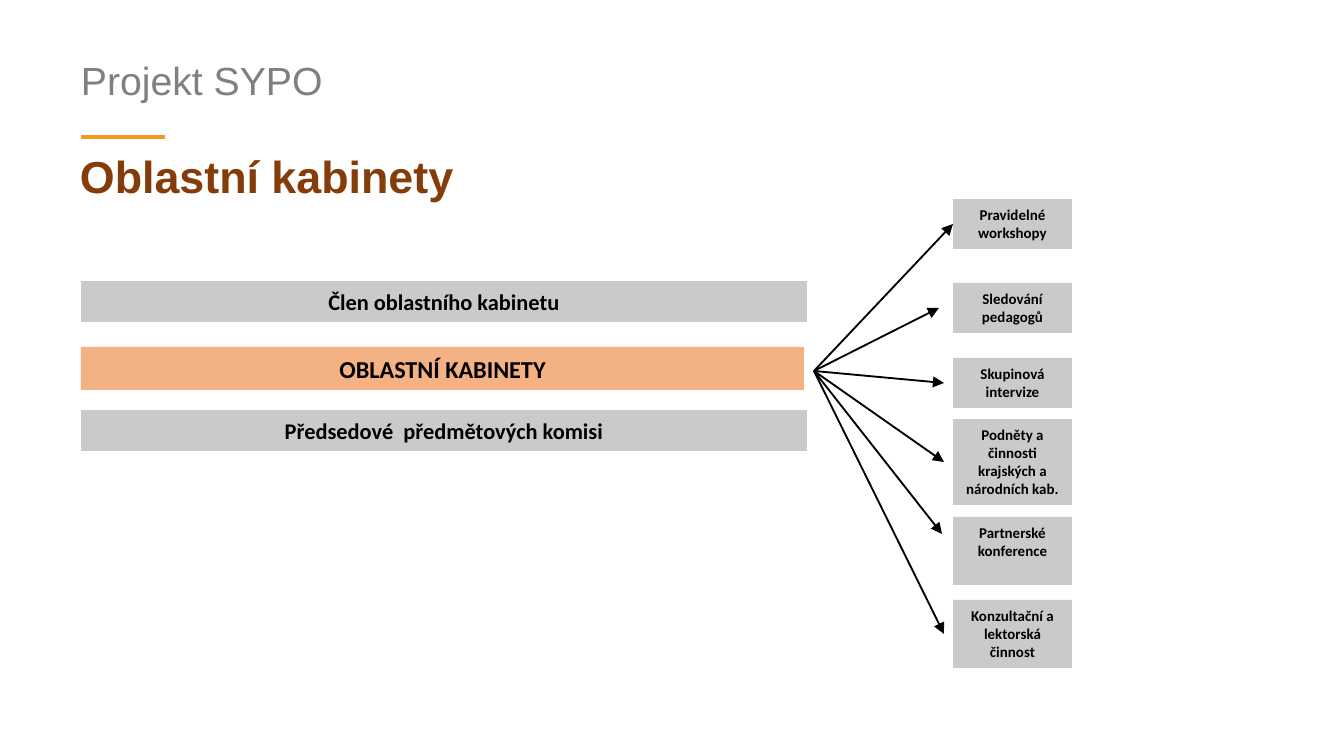
from lxml.etree import SubElement
from pptx import Presentation
from pptx.dml.color import RGBColor
from pptx.enum.shapes import MSO_CONNECTOR, MSO_SHAPE
from pptx.enum.text import MSO_ANCHOR, PP_ALIGN
from pptx.oxml.ns import qn
from pptx.util import Pt

EMU_PER_PX = 914400 / 134.4
INSET = 7
LEFT = 81
HUB = (814, 371)
ACTIVITY_LEFT, ACTIVITY_WIDTH = 953, 119

BLACK = RGBColor(0, 0, 0)
GRAY = RGBColor(0x80, 0x80, 0x80)
BROWN = RGBColor(0x84, 0x3C, 0x0B)
ORANGE = RGBColor(0xF4, 0x97, 0x1D)
PEACH = RGBColor(0xF4, 0xB1, 0x83)
SILVER = RGBColor(0xCA, 0xCA, 0xCA)

# text, top, width, height, fill, font size
BARS = [
    ("Člen oblastního kabinetu", 281, 726, 41, SILVER, 12),
    ("OBLASTNÍ KABINETY", 347, 723, 43, PEACH, 13),
    ("Předsedové  předmětových komisi", 410, 726, 41, SILVER, 12),
]

# text, top, height, arrow tip (None: joined to the box)
ACTIVITIES = [
    ("Pravidelné workshopy", 199, 50, None),
    ("Sledování pedagogů", 283, 50, (939, 308)),
    ("Skupinová intervize", 358, 50, (944, 383)),
    ("Podněty a činnosti krajských a národních kab.", 419, 86, (944, 462)),
    ("Partnerské\nkonference", 517, 68, (942, 534)),
    ("Konzultační a lektorská činnost", 600, 68, (944, 634)),
]


def px(*lengths):
    return [round(length * EMU_PER_PX) for length in lengths]


def write(shape, text, font_name, size, color, bold, align, line_spacing=1.0):
    frame = shape.text_frame
    frame.word_wrap = True
    frame.vertical_anchor = MSO_ANCHOR.TOP
    inset, = px(INSET)
    frame.margin_left = frame.margin_right = inset
    frame.margin_top = frame.margin_bottom = inset
    frame.text = text
    for para in frame.paragraphs:
        para.alignment = align
        para.line_spacing = line_spacing
        for span in para.runs:
            span.font.name = font_name
            span.font.size = Pt(size)
            span.font.bold = bold
            span.font.color.rgb = color


def add_heading(page, text, bounds, size, color, bold, line_spacing):
    box = page.shapes.add_textbox(*px(*bounds))
    write(box, text, "Arial", size, color, bold, PP_ALIGN.LEFT, line_spacing)


def add_label(page, text, bounds, fill, size):
    """Add a filled rectangle with bold centred text."""
    box = page.shapes.add_shape(MSO_SHAPE.RECTANGLE, *px(*bounds))
    box.shadow.inherit = False
    box.fill.solid()
    box.fill.fore_color.rgb = fill
    box.line.fill.background()
    write(box, text, "Calibri", size, BLACK, True, PP_ALIGN.CENTER)
    return box


def add_line(page, start, end, color, width):
    line = page.shapes.add_connector(MSO_CONNECTOR.STRAIGHT, *px(*start, *end))
    line.line.color.rgb = color
    line.line.width = Pt(width)
    SubElement(line._element.spPr, qn("a:effectLst"))
    return line


def add_arrow(page, start, end):
    arrow = add_line(page, start, end, BLACK, 1)
    SubElement(arrow.line._get_or_add_ln(), qn("a:tailEnd"), type="triangle")
    return arrow


def add_activity(page, text, top, height, tip):
    box = add_label(page, text, (ACTIVITY_LEFT, top, ACTIVITY_WIDTH, height), SILVER, 8)
    arrow = add_arrow(page, HUB, tip or (ACTIVITY_LEFT, top + height // 2))
    if tip is None:
        arrow.end_connect(box, 1)


def main():
    deck = Presentation()
    deck.slide_width, deck.slide_height = px(1344, 756)
    page = deck.slides.add_slide(deck.slide_layouts[6])

    add_line(page, (LEFT, 137), (165, 137), ORANGE, 2)
    add_heading(page, "Projekt SYPO", (74, 46, 1168, 89), 21, GRAY, False, 1.08)
    add_heading(page, "Oblastní kabinety", (73, 148, 1008, 85), 24, BROWN, True, 0.9)

    for text, top, width, height, fill, size in BARS:
        add_label(page, text, (LEFT, top, width, height), fill, size)
    for activity in ACTIVITIES:
        add_activity(page, *activity)

    deck.save("out.pptx")


if __name__ == "__main__":
    main()
